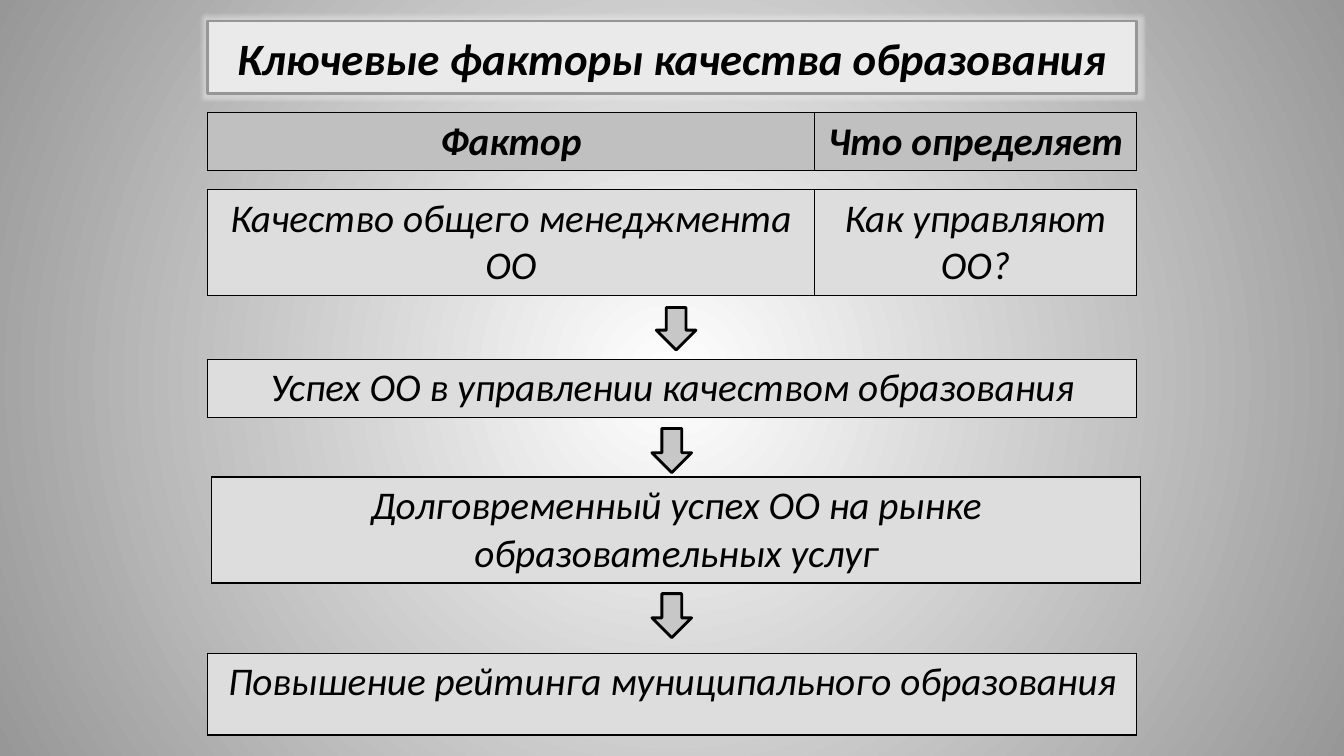
from pptx import Presentation
from pptx.dml.color import RGBColor
from pptx.enum.shapes import MSO_SHAPE
from pptx.enum.text import MSO_ANCHOR, PP_ALIGN
from pptx.oxml import parse_xml
from pptx.oxml.ns import nsdecls
from pptx.util import Cm, Pt

BLACK = RGBColor(0x00, 0x00, 0x00)
WHITE = RGBColor(0xFF, 0xFF, 0xFF)
EDGE_GRAY = RGBColor(0x97, 0x97, 0x97)
TITLE_FILL = RGBColor(0xEA, 0xEA, 0xEA)
TITLE_LINE = RGBColor(0x96, 0x96, 0x96)
HEADER_FILL = RGBColor(0xC0, 0xC0, 0xC0)
STEP_FILL = RGBColor(0xDD, 0xDD, 0xDD)
ARROW_FILL = RGBColor(0xC7, 0xC7, 0xC7)

LEFT, WIDTH = 5.23, 23.42
FACTOR_COLUMNS = (15.29, 8.13)
FULL_COLUMN = (WIDTH,)

BANDS = [
    (LEFT, 2.84, 1.45, FACTOR_COLUMNS, ("Фактор", "Что определяет"), HEADER_FILL, True),
    (LEFT, 4.78, 2.62, FACTOR_COLUMNS,
     ("Качество общего менеджмента ОО", "Как управляют ОО?"), STEP_FILL, False),
    (LEFT, 9.05, 1.45, FULL_COLUMN,
     ("Успех ОО в управлении качеством образования",), STEP_FILL, False),
    (5.33, 12.02, 2.62, FULL_COLUMN,
     ("Долговременный успех ОО на рынке образовательных услуг",), STEP_FILL, False),
    (LEFT, 16.46, 2.06, FULL_COLUMN,
     ("Повышение рейтинга муниципального образования",), STEP_FILL, False),
]
ARROWS = [(16.54, 7.75, 1.07), (16.43, 10.8, 1.11), (16.43, 14.96, 1.11)]


def write_text(frame, wording, size, bold):
    """Write one centred italic paragraph."""
    paragraph = frame.paragraphs[0]
    paragraph.alignment = PP_ALIGN.CENTER
    run = paragraph.add_run()
    run.text = wording
    font_format = {"name": "Calibri", "size": Pt(size), "bold": bold, "italic": True}
    for attribute, value in font_format.items():
        setattr(run.font, attribute, value)
    run.font.color.rgb = BLACK


def paint_background(slide):
    """Fill the slide with a gradient that radiates from its centre."""
    fill = slide.background.fill
    fill.gradient()
    for stop, color in zip(fill.gradient_stops, (WHITE, EDGE_GRAY)):
        stop.color.rgb = color
    for linear in slide.element.xpath(".//p:bg//a:lin"):
        linear.getparent().replace(linear, parse_xml(
            f'<a:path {nsdecls("a")} path="circle">'
            '<a:fillToRect l="50000" t="50000" r="50000" b="50000"/></a:path>'))


def add_box(slide, preset, box, fill, line):
    """Add an outlined preset shape without shadow."""
    shape = slide.shapes.add_shape(preset, *map(Cm, box))
    shape.shadow.inherit = False
    shape.fill.solid()
    shape.fill.fore_color.rgb = fill
    shape.line.color.rgb = line
    shape.line.width = Pt(2)
    return shape


def add_title(slide, box, wording):
    """Add the title plate with its soft glow."""
    title = add_box(slide, MSO_SHAPE.ROUND_2_DIAG_RECTANGLE, box, TITLE_FILL, TITLE_LINE)
    title.adjustments[0] = 0
    for effects in title.element.xpath(".//a:effectLst"):
        effects.append(parse_xml(
            f'<a:glow {nsdecls("a")} rad="63500"><a:srgbClr val="{TITLE_FILL}">'
            '<a:alpha val="50000"/></a:srgbClr></a:glow>'))
    title.text_frame.word_wrap = True
    title.text_frame.vertical_anchor = MSO_ANCHOR.MIDDLE
    write_text(title.text_frame, wording, 32, True)


def outline_cell(cell):
    """Draw a thin black border on every side of a cell."""
    properties = cell._tc.get_or_add_tcPr()
    for side in "LRTB":
        properties.append(parse_xml(
            f'<a:ln{side} {nsdecls("a")} w="{Pt(1)}"><a:solidFill>'
            f'<a:srgbClr val="{BLACK}"/></a:solidFill></a:ln{side}>'))


def add_band(slide, left, top, height, columns, wordings, fill, bold):
    """Add a one-row table holding a step of the chain."""
    table = slide.shapes.add_table(
        1, len(columns), Cm(left), Cm(top), Cm(sum(columns)), Cm(height)).table
    table.first_row = table.horz_banding = False
    for column, width, cell, wording in zip(table.columns, columns, table.iter_cells(), wordings):
        column.width = Cm(width)
        outline_cell(cell)
        cell.fill.solid()
        cell.fill.fore_color.rgb = fill
        write_text(cell.text_frame, wording, 28, bold)


def main():
    """Build the slide and save it."""
    presentation = Presentation()
    presentation.slide_width, presentation.slide_height = Cm(33.87), Cm(19.05)
    slide = presentation.slides.add_slide(presentation.slide_layouts[6])
    paint_background(slide)
    add_title(slide, (LEFT, 0.53, WIDTH, 1.83), "Ключевые факторы качества образования")
    for band in BANDS:
        add_band(slide, *band)
    for left, top, height in ARROWS:
        add_box(slide, MSO_SHAPE.DOWN_ARROW, (left, top, 1, height), ARROW_FILL, BLACK)
    presentation.save("out.pptx")


if __name__ == "__main__":
    main()
